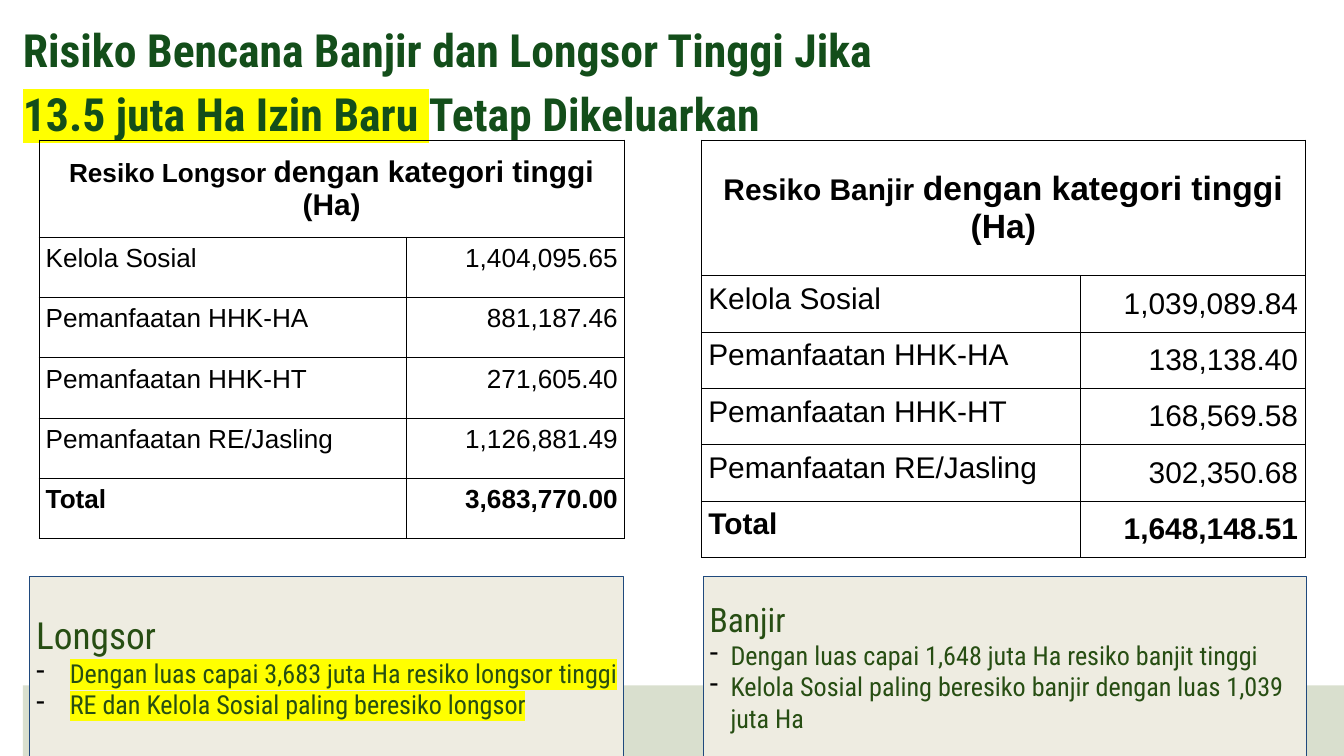
from dataclasses import dataclass

from lxml.etree import SubElement
from pptx import Presentation
from pptx.dml.color import RGBColor
from pptx.enum.shapes import MSO_SHAPE
from pptx.enum.text import MSO_ANCHOR, PP_ALIGN
from pptx.oxml import parse_xml
from pptx.oxml.ns import nsdecls, qn
from pptx.util import Pt


@dataclass(frozen=True)
class Theme:
    heading_font: str = "Roboto Condensed"
    table_font: str = "Arial"
    title_green: str = "134E1A"
    note_green: str = "274E13"
    black: str = "000000"
    marker: str = "FFFF00"
    panel: str = "EEECE1"
    panel_line: str = "1F497D"
    band: str = "D9DFCE"
    title_size: float = 49
    note_size: float = 28
    line_width: float = 0.75
    inset: float = 7.2


THEME = Theme()
TABLE_TOP = 149.8
PANEL_TOP = 617.8
PANEL_HEIGHT = 192.2


def write_text(paragraph, text, *, size, color, font, bold=False, marker=None):
    run = paragraph.add_run()
    run.text = text
    run.font.size = Pt(size)
    run.font.bold = bold
    run.font.color.rgb = RGBColor.from_string(color)
    if marker:
        highlight = SubElement(run.font._element, qn("a:highlight"))
        SubElement(highlight, qn("a:srgbClr"), val=marker)
    run.font.name = font


def set_insets(frame, inset):
    frame.margin_left = frame.margin_right = Pt(inset)
    frame.margin_top = frame.margin_bottom = Pt(inset)


def add_box(slide, preset, left, top, width, height, fill, line=None):
    box = slide.shapes.add_shape(preset, Pt(left), Pt(top), Pt(width), Pt(height))
    box.shadow.inherit = False
    box.fill.solid()
    box.fill.fore_color.rgb = RGBColor.from_string(fill)
    if line:
        box.line.color.rgb = RGBColor.from_string(line)
        box.line.width = Pt(THEME.line_width)
    else:
        box.line.fill.background()
    return box


def add_dash(paragraph, indent):
    properties = paragraph._p.get_or_add_pPr()
    properties.set("marL", str(Pt(indent)))
    properties.set("indent", str(-Pt(indent)))
    bullet_color = SubElement(properties, qn("a:buClr"))
    SubElement(bullet_color, qn("a:srgbClr"), val=THEME.black)
    SubElement(properties, qn("a:buChar"), char="-")


def fill_title(slide):
    title = slide.shapes.title
    title.left, title.top = Pt(24.5), Pt(14.4)
    title.width, title.height = Pt(1155.6), Pt(137.5)
    frame = title.text_frame
    frame.word_wrap = True
    frame.vertical_anchor = MSO_ANCHOR.TOP
    set_insets(frame, 0)
    lines = [
        [("Risiko Bencana Banjir dan Longsor Tinggi Jika", None)],
        [("13.5 juta Ha Izin Baru ", THEME.marker), ("Tetap Dikeluarkan", None)],
    ]
    for index, parts in enumerate(lines):
        paragraph = frame.add_paragraph() if index else frame.paragraphs[0]
        paragraph.alignment = PP_ALIGN.LEFT
        paragraph.line_spacing = 1.16
        paragraph.space_before = Pt(0)
        for text, marker in parts:
            write_text(paragraph, text, size=THEME.title_size, color=THEME.title_green,
                       font=THEME.heading_font, bold=True, marker=marker)


def add_panel(slide, heading, notes, *, left, width, heading_size, indent, marker=None):
    panel = add_box(slide, MSO_SHAPE.FLOWCHART_PROCESS, left, PANEL_TOP, width,
                    PANEL_HEIGHT, THEME.panel, THEME.panel_line)
    frame = panel.text_frame
    frame.word_wrap = True
    frame.vertical_anchor = MSO_ANCHOR.MIDDLE
    set_insets(frame, THEME.inset)
    style = {"color": THEME.note_green, "font": THEME.heading_font}
    frame.paragraphs[0].alignment = PP_ALIGN.LEFT
    write_text(frame.paragraphs[0], heading, size=heading_size, **style)
    for note in notes:
        paragraph = frame.add_paragraph()
        paragraph.alignment = PP_ALIGN.LEFT
        add_dash(paragraph, indent)
        write_text(paragraph, note, size=THEME.note_size, marker=marker, **style)


def format_cell(cell, anchor):
    set_insets(cell, THEME.inset)
    cell.vertical_anchor = anchor
    cell.fill.background()
    properties = cell._tc.get_or_add_tcPr()
    for index, side in enumerate(("lnL", "lnR", "lnT", "lnB")):
        properties.insert(index, parse_xml(
            f'<a:{side} {nsdecls("a")} w="{Pt(THEME.line_width)}"><a:solidFill>'
            f'<a:srgbClr val="{THEME.black}"/></a:solidFill></a:{side}>'))


def add_risk_table(slide, hazard, areas, *, left, widths, header_height, row_height,
                   size, area_anchor):
    height = header_height + row_height * len(areas)
    table = slide.shapes.add_table(len(areas) + 1, 2, Pt(left), Pt(TABLE_TOP),
                                   Pt(sum(widths)), Pt(height)).table
    table.first_row = table.horz_banding = False
    for column, width in zip(table.columns, widths):
        column.width = Pt(width)
    for index, row in enumerate(table.rows):
        row.height = Pt(row_height if index else header_height)
    style = {"color": THEME.black, "font": THEME.table_font}

    header = table.cell(0, 0)
    header.merge(table.cell(0, 1))
    for column in range(2):
        format_cell(table.cell(0, column), MSO_ANCHOR.MIDDLE)
    heading = header.text_frame.paragraphs[0]
    heading.alignment = PP_ALIGN.CENTER
    write_text(heading, f"Resiko {hazard} ", size=size, bold=True, **style)
    write_text(heading, "dengan kategori tinggi (Ha)", size=size + 4, bold=True, **style)

    columns = [(PP_ALIGN.LEFT, MSO_ANCHOR.TOP), (PP_ALIGN.RIGHT, area_anchor)]
    for row, entry in enumerate(areas.items(), 1):
        for column, (text, (alignment, anchor)) in enumerate(zip(entry, columns)):
            cell = table.cell(row, column)
            format_cell(cell, anchor)
            paragraph = cell.text_frame.paragraphs[0]
            paragraph.alignment = alignment
            write_text(paragraph, text, size=size, bold=row == len(areas), **style)


def main():
    presentation = Presentation()
    presentation.slide_width, presentation.slide_height = Pt(1440), Pt(810)
    slide = presentation.slides.add_slide(presentation.slide_layouts[5])

    fill_title(slide)
    add_box(slide, MSO_SHAPE.RECTANGLE, 24.5, 734.4, 1440, 81, THEME.band)
    add_panel(slide, "Longsor",
              ["Dengan luas capai 3,683 juta Ha resiko longsor tinggi",
               "RE dan Kelola Sosial paling beresiko longsor"],
              left=31.7, width=636.5, heading_size=40, indent=36, marker=THEME.marker)
    add_panel(slide, "Banjir",
              ["Dengan luas capai 1,648 juta Ha resiko banjit tinggi",
               "Kelola Sosial paling beresiko banjir dengan luas 1,039 juta Ha"],
              left=753.1, width=646.6, heading_size=36, indent=22.5)

    categories = ["Kelola Sosial", "Pemanfaatan HHK-HA", "Pemanfaatan HHK-HT",
                  "Pemanfaatan RE/Jasling", "Total"]
    landslide_areas = ["1,404,095.65", "881,187.46", "271,605.40",
                       "1,126,881.49", "3,683,770.00"]
    flood_areas = ["1,039,089.84", "138,138.40", "168,569.58",
                   "302,350.68", "1,648,148.51"]
    add_risk_table(slide, "Longsor", dict(zip(categories, landslide_areas)),
                   left=41.8, widths=(393.8, 233.3), header_height=104.4,
                   row_height=64.6, size=28, area_anchor=MSO_ANCHOR.TOP)
    add_risk_table(slide, "Banjir", dict(zip(categories, flood_areas)),
                   left=751.7, widths=(406.1, 240.5), header_height=145.4,
                   row_height=60.4, size=32, area_anchor=MSO_ANCHOR.MIDDLE)

    presentation.save("out.pptx")


if __name__ == "__main__":
    main()
